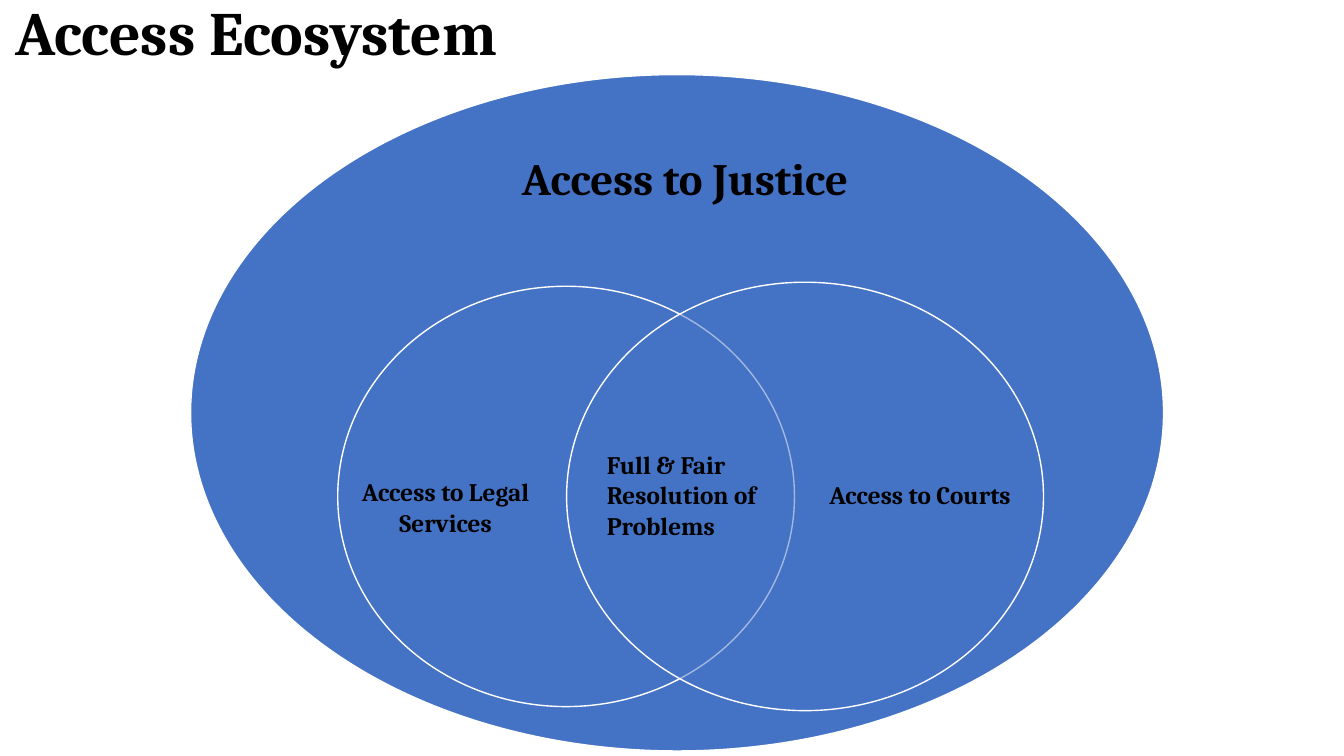
from lxml import etree
from pptx import Presentation
from pptx.dml.color import RGBColor
from pptx.enum.shapes import MSO_SHAPE
from pptx.enum.text import MSO_ANCHOR, PP_ALIGN
from pptx.oxml.ns import qn
from pptx.util import Inches, Pt

COLORS = {"blue": "4472C4", "white": "FFFFFF", "black": "000000"}
FONT = "Cambria"
TITLE = ("Access Ecosystem", (0.05, -0.37, 11.5, 1.45), 44)

# Left, top, width, height and opacity in percent
ELLIPSES = [
    ((1.89, 0.74, 9.65, 6.71), 100),  # justice
    ((3.35, 2.84, 4.53, 4.17), 50),   # legal services
    ((5.62, 2.80, 4.73, 4.25), 50),   # courts
]
LABELS = [
    ("Access to Justice", (3.46, 1.45, 6.67, 0.64), 32, PP_ALIGN.CENTER),
    ("Access to Legal Services", (3.09, 4.68, 2.66, 0.71), 18, PP_ALIGN.CENTER),
    ("Access to Courts", (7.64, 4.71, 2.97, 0.40), 18, PP_ALIGN.CENTER),
    ("Full & Fair Resolution of Problems", (5.92, 4.41, 1.78, 1.01), 18, PP_ALIGN.LEFT),
]


def color(name):
    return RGBColor.from_string(COLORS[name])


def write(shape, text, size, align):
    frame = shape.text_frame
    frame.text = text
    frame.word_wrap = True
    para = frame.paragraphs[0]
    para.alignment = align
    font = para.runs[0].font
    font.name, font.size, font.bold = FONT, Pt(size), True
    font.color.rgb = color("black")
    return para


def add_ellipse(page, place, opacity):
    oval = page.shapes.add_shape(MSO_SHAPE.OVAL, *map(Inches, place))
    oval.shadow.inherit = False
    oval.fill.solid()
    oval.fill.fore_color.rgb = color("blue")
    oval.line.color.rgb = color("white")
    oval.line.width = Pt(1)
    if opacity < 100:
        fill_color = oval.fill._xPr.find(qn("a:solidFill"))[0]
        etree.SubElement(fill_color, qn("a:alpha")).set("val", str(opacity * 1000))


def main():
    deck = Presentation()
    deck.slide_width, deck.slide_height = Inches(13.33), Inches(7.5)
    page = deck.slides.add_slide(deck.slide_layouts[5])

    # Title
    text, place, size = TITLE
    title = page.shapes.title
    title.left, title.top, title.width, title.height = map(Inches, place)
    para = write(title, text, size, PP_ALIGN.LEFT)
    para.line_spacing = 0.9
    title.text_frame.vertical_anchor = MSO_ANCHOR.MIDDLE

    # Overlapping areas
    for place, opacity in ELLIPSES:
        add_ellipse(page, place, opacity)

    # Labels
    for text, place, size, align in LABELS:
        box = page.shapes.add_textbox(*map(Inches, place))
        write(box, text, size, align)

    deck.save("out.pptx")


if __name__ == "__main__":
    main()
